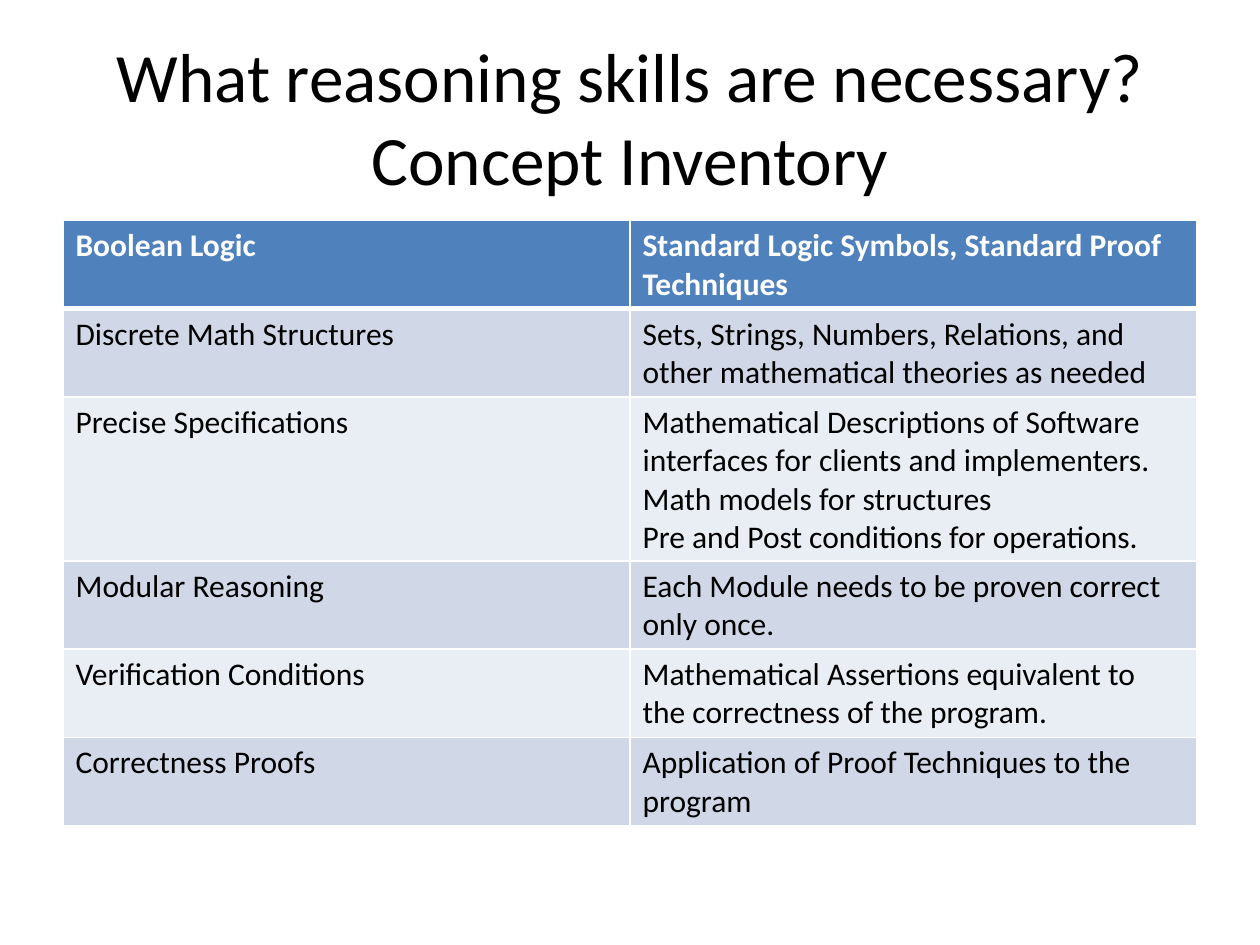
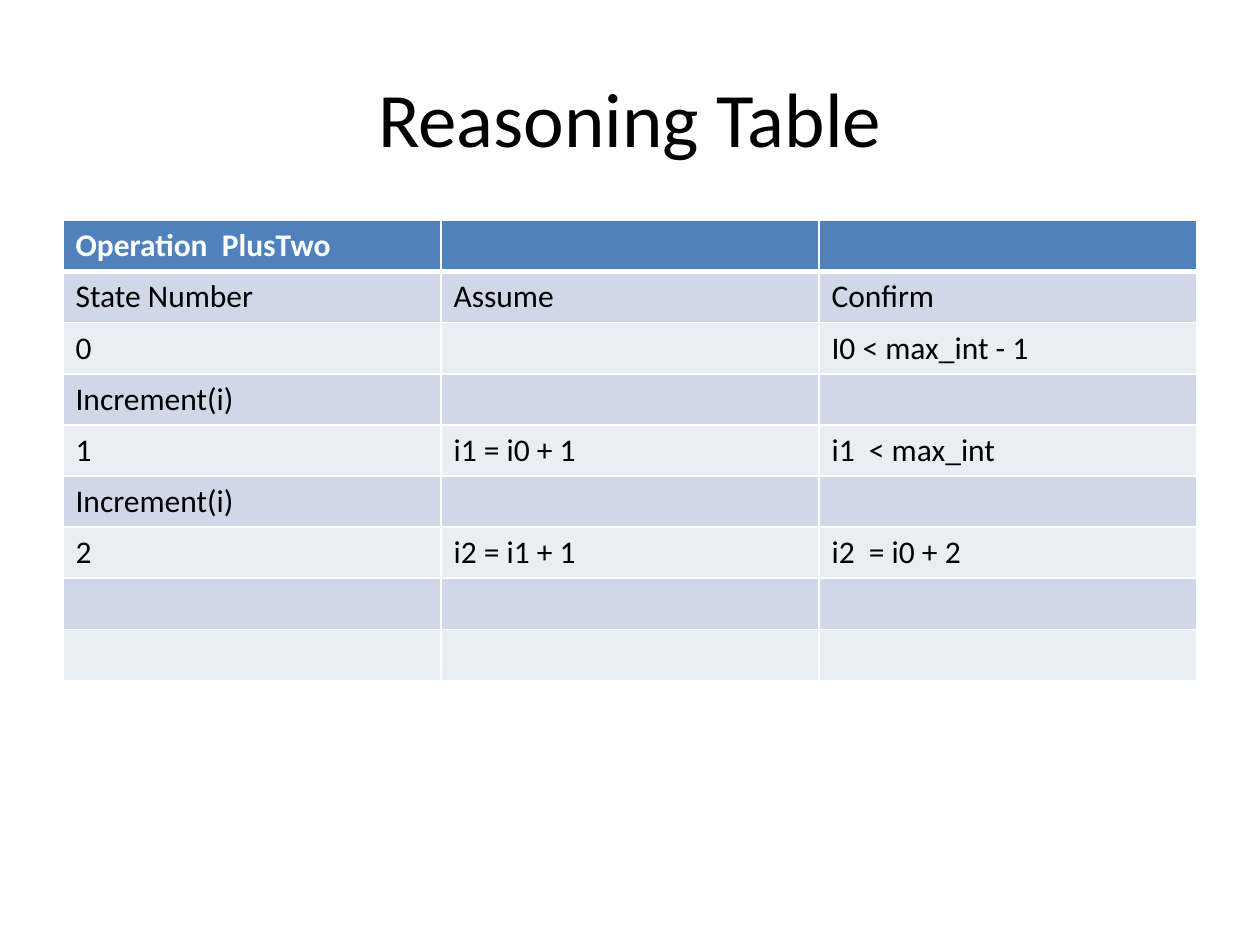
from dataclasses import dataclass

from lxml.etree import SubElement as SubEl
from pptx import Presentation
from pptx.dml.color import RGBColor as RGB
from pptx.enum.text import MSO_ANCHOR as ANCHOR, PP_ALIGN as ALIGN
from pptx.oxml.ns import qn
from pptx.util import Pt


@dataclass(frozen=True)
class Theme:
    font: str = "Calibri"
    ink: str = "000000"
    white: str = "FFFFFF"
    head: str = "4F81BD"
    bands: tuple = ("D0D8E8", "E9EDF4")
    title: float = 44
    small: float = 39.6
    body: float = 18
    rule: float = 1
    thick: float = 3


THEME = Theme()

# Page grid, in points
WIDE, HIGH = 720, 540
LEFT, SPAN = 36, 648
TITLE_TOP, TITLE_HIGH = 21.6, 90
TABLE_TOP, ROW_HIGH = 126, 29.2

SKILLS = [
    ("Boolean Logic", "Standard Logic Symbols, Standard Proof Techniques"),
    ("Discrete Math Structures",
     "Sets, Strings, Numbers, Relations, and other mathematical theories as needed"),
    ("Precise Specifications",
     "Mathematical Descriptions of Software  interfaces for clients and implementers.\n"
     "Math models for structures\n"
     "Pre and Post conditions for operations."),
    ("Modular Reasoning", "Each Module needs to be proven correct only once."),
    ("Verification Conditions",
     "Mathematical Assertions equivalent to the correctness of the program."),
    ("Correctness Proofs", "Application of Proof Techniques to the program"),
]

STATES = [
    ("Operation  PlusTwo", "", ""),
    ("State Number", "Assume", "Confirm"),
    ("0", "", "I0 < max_int - 1"),
    ("Increment(i)", "", ""),
    ("1", "i1 = i0 + 1", "i1  < max_int"),
    ("Increment(i)", "", ""),
    ("2", "i2 = i1 + 1", "i2  = i0 + 2"),
    ("", "", ""),
    ("", "", ""),
]


def set_font(para, size, color, bold=False):
    font = para.font
    font.name, font.size, font.bold = THEME.font, Pt(size), bold
    font.color.rgb = RGB.from_string(color)


def add_title(slide, text, size):
    box = slide.shapes.add_textbox(Pt(LEFT), Pt(TITLE_TOP), Pt(SPAN), Pt(TITLE_HIGH))
    frame = box.text_frame
    frame.word_wrap = True
    frame.vertical_anchor = ANCHOR.MIDDLE
    para = frame.paragraphs[0]
    para.text = text
    para.alignment = ALIGN.CENTER
    set_font(para, size, THEME.ink)


def add_rules(cell, top, bottom):
    """Draw the four white cell borders; call before filling the cell."""
    props = cell._tc.get_or_add_tcPr()
    widths = {"L": THEME.rule, "R": THEME.rule, "T": top, "B": bottom}
    for side, width in widths.items():
        line = SubEl(props, qn(f"a:ln{side}"), w=str(Pt(width)))
        fill = SubEl(line, qn("a:solidFill"))
        SubEl(fill, qn("a:srgbClr"), val=THEME.white)


def fill_cell(cell, text, row):
    head = row == 0
    add_rules(cell,
              top=THEME.thick if row == 1 else THEME.rule,
              bottom=THEME.thick if head else THEME.rule)
    cell.fill.solid()
    shade = THEME.head if head else THEME.bands[(row - 1) % 2]
    cell.fill.fore_color.rgb = RGB.from_string(shade)
    cell.text = text
    for para in cell.text_frame.paragraphs:
        set_font(para, THEME.body, THEME.white if head else THEME.ink, head)


def add_grid(slide, data):
    rows, cols = len(data), len(data[0])
    table = slide.shapes.add_table(rows, cols, Pt(LEFT), Pt(TABLE_TOP),
                                   Pt(SPAN), Pt(ROW_HIGH * rows)).table
    for row, texts in enumerate(data):
        for col, text in enumerate(texts):
            fill_cell(table.cell(row, col), text, row)


def add_page(deck, title, size, data):
    slide = deck.slides.add_slide(deck.slide_layouts[6])
    add_title(slide, title, size)
    add_grid(slide, data)


def main():
    deck = Presentation()
    deck.slide_width, deck.slide_height = Pt(WIDE), Pt(HIGH)
    # Skills and what each one covers
    add_page(deck, "What reasoning skills are necessary?\nConcept Inventory",
             THEME.small, SKILLS)
    # Assumptions and obligations for each state
    add_page(deck, "Reasoning Table", THEME.title, STATES)
    deck.save("out.pptx")


if __name__ == "__main__":
    main()
